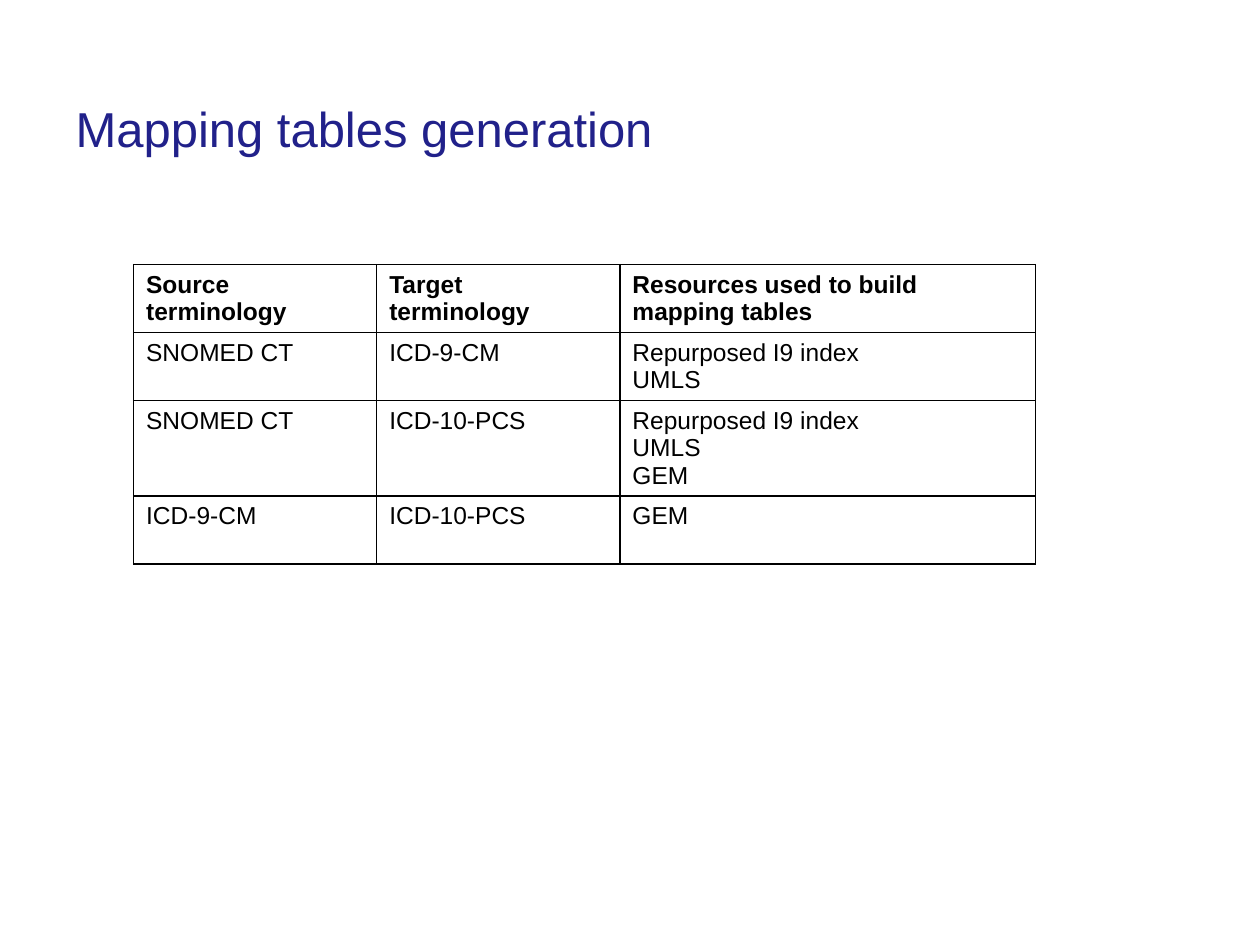
from lxml.etree import SubElement
from pptx import Presentation
from pptx.dml.color import RGBColor
from pptx.enum.text import MSO_ANCHOR, PP_ALIGN
from pptx.oxml.ns import qn
from pptx.util import Inches, Pt

COLORS = {"title": "21218A", "text": "000000", "border": "000000"}
FONT = "Arial"
COLUMN_WIDTHS = [1.93, 1.93, 3.3]
ROW_HEIGHTS = [0.54, 0.54, 0.75, 0.54]
MAPPINGS = [
    ("Source terminology", "Target terminology", "Resources used to build mapping tables"),
    ("SNOMED CT", "ICD-9-CM", "Repurposed I9 index\nUMLS"),
    ("SNOMED CT", "ICD-10-PCS", "Repurposed I9 index\nUMLS\nGEM"),
    ("ICD-9-CM", "ICD-10-PCS", "GEM"),
]


def format_text(frame, size, color, bold=False):
    """Left-align every paragraph and set the font of its runs."""
    for para in frame.paragraphs:
        para.alignment = PP_ALIGN.LEFT
        for span in para.runs:
            span.font.name = FONT
            span.font.size = Pt(size)
            span.font.bold = bold
            span.font.color.rgb = RGBColor.from_string(COLORS[color])


def add_title(page, text):
    """Place and fill the title placeholder."""
    title = page.shapes.title
    title.left, title.top = Inches(0.5), Inches(0.7)
    title.width, title.height = Inches(7.34), Inches(0.63)
    frame = title.text_frame
    frame.text = text
    frame.vertical_anchor = MSO_ANCHOR.MIDDLE
    frame.margin_left = frame.margin_right = Inches(0.1)
    frame.margin_top = frame.margin_bottom = Inches(0.1)
    format_text(frame, 28, "title")


def add_borders(cell, width=1):
    """Draw a solid line on all four sides of a cell."""
    properties = cell._tc.get_or_add_tcPr()
    for side in ("a:lnL", "a:lnR", "a:lnT", "a:lnB"):
        line = SubElement(properties, qn(side), w=str(Pt(width)))
        fill = SubElement(line, qn("a:solidFill"))
        SubElement(fill, qn("a:srgbClr"), val=COLORS["border"])


def add_mapping_table(page):
    """Add the table of terminology mappings."""
    table = page.shapes.add_table(
        len(MAPPINGS), len(COLUMN_WIDTHS), Inches(1.06), Inches(2.1),
        Inches(sum(COLUMN_WIDTHS)), Inches(sum(ROW_HEIGHTS)),
    ).table
    table.horz_banding = False
    for column, width in zip(table.columns, COLUMN_WIDTHS):
        column.width = Inches(width)
    for index, (row, height, texts) in enumerate(zip(table.rows, ROW_HEIGHTS, MAPPINGS)):
        row.height = Inches(height)
        for cell, text in zip(row.cells, texts):
            cell.text_frame.text = text
            format_text(cell.text_frame, 14, "text", bold=index == 0)
            add_borders(cell)
            cell.fill.background()


def main():
    """Build the slide and save the deck."""
    deck = Presentation()
    deck.slide_width, deck.slide_height = Inches(10), Inches(7.5)
    page = deck.slides.add_slide(deck.slide_layouts[5])
    add_title(page, "Mapping tables generation")
    add_mapping_table(page)
    deck.save("out.pptx")


if __name__ == "__main__":
    main()
